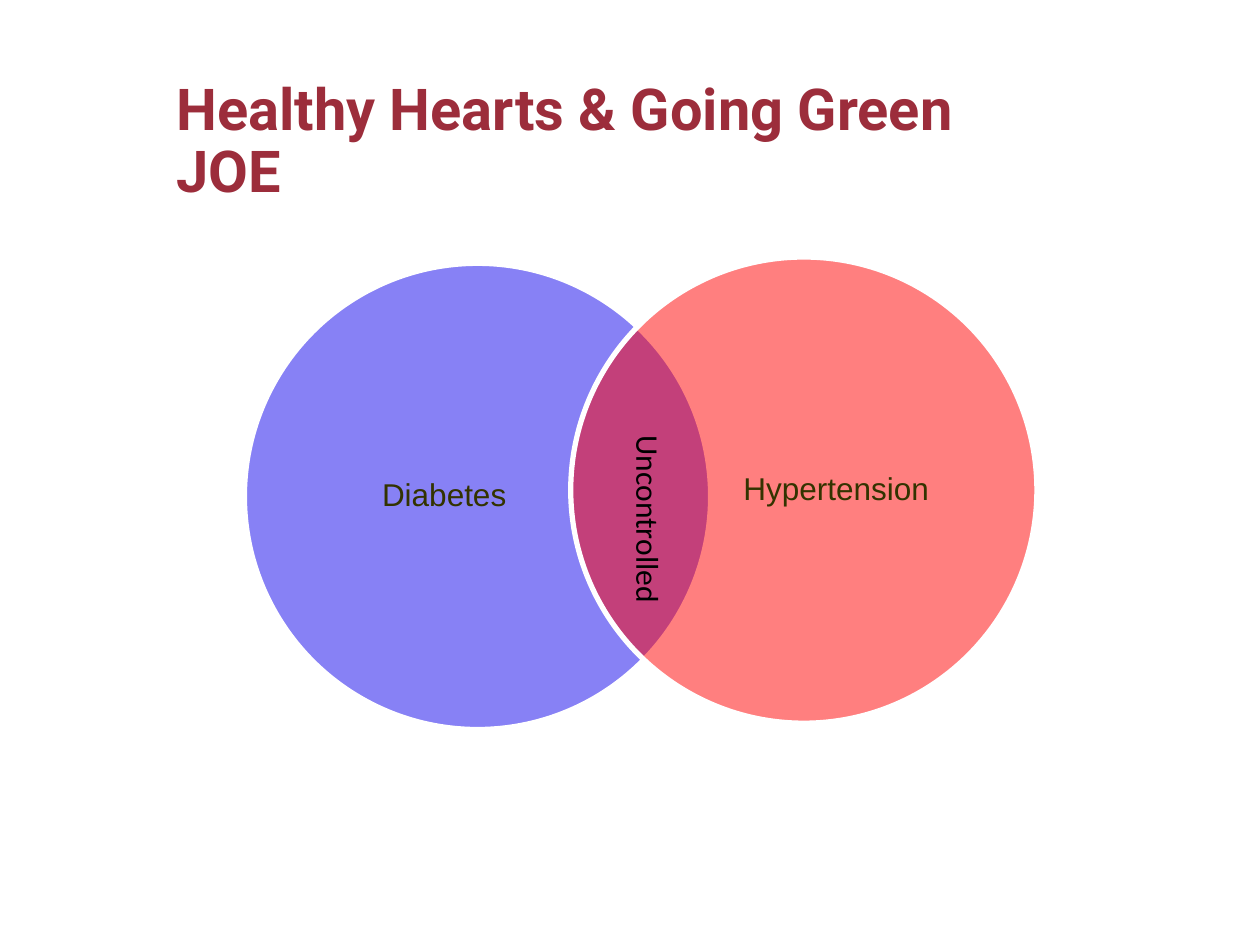
from dataclasses import dataclass

from lxml.etree import SubElement
from pptx import Presentation
from pptx.dml.color import RGBColor
from pptx.enum.shapes import MSO_SHAPE
from pptx.enum.text import MSO_ANCHOR, MSO_AUTO_SIZE, PP_ALIGN
from pptx.oxml.ns import qn
from pptx.util import Inches, Pt


@dataclass(frozen=True)
class Theme:
    title_color: RGBColor = RGBColor(0x9C, 0x2D, 0x3B)
    label_color: RGBColor = RGBColor(0x33, 0x33, 0x00)
    overlap_color: RGBColor = RGBColor(0, 0, 0)
    diabetes_fill: RGBColor = RGBColor(0x10, 0x05, 0xED)
    hypertension_fill: RGBColor = RGBColor(0xFF, 0, 0)
    outline: RGBColor = RGBColor(0xFF, 0xFF, 0xFF)
    title_font: str = "Roboto"
    label_font: str = "Arial"
    overlap_font: str = "Calibri"
    title_size: int = 33
    label_size: int = 18
    outline_width: int = 3
    fill_opacity: int = 50
    line_spacing: float = 0.9


class VennSlide:
    def __init__(self, slide, theme):
        self.slide = slide
        self.theme = theme

    def add_run(self, paragraph, text, font_name, size, color, bold=False):
        run = paragraph.add_run()
        run.text = text
        run.font.name = font_name
        run.font.size = Pt(size)
        run.font.color.rgb = color
        run.font.bold = bold

    def set_title(self, lines, left, top, width, height):
        title = self.slide.shapes.title
        title.left, title.top = Inches(left), Inches(top)
        title.width, title.height = Inches(width), Inches(height)
        frame = title.text_frame
        frame.auto_size = MSO_AUTO_SIZE.NONE
        frame.vertical_anchor = MSO_ANCHOR.MIDDLE
        paragraph = frame.paragraphs[0]
        paragraph.alignment = PP_ALIGN.LEFT
        paragraph.line_spacing = self.theme.line_spacing
        for index, line in enumerate(lines):
            if index:
                paragraph.add_line_break()
            self.add_run(paragraph, line, self.theme.title_font,
                         self.theme.title_size, self.theme.title_color, bold=True)

    def add_circle(self, left, top, diameter, color):
        circle = self.slide.shapes.add_shape(
            MSO_SHAPE.OVAL, Inches(left), Inches(top), Inches(diameter), Inches(diameter))
        circle.shadow.inherit = False
        circle.fill.solid()
        circle.fill.fore_color.rgb = color
        color_element = circle.fill._xPr.find(qn("a:solidFill"))[0]
        SubElement(color_element, qn("a:alpha"), val=str(self.theme.fill_opacity * 1000))
        circle.line.color.rgb = self.theme.outline
        circle.line.width = Pt(self.theme.outline_width)

    def add_text_box(self, left, top, width, height):
        box = self.slide.shapes.add_textbox(
            Inches(left), Inches(top), Inches(width), Inches(height))
        box.text_frame.word_wrap = True
        return box.text_frame

    def add_circle_label(self, text, left, top, width, height, alignment):
        frame = self.add_text_box(left, top, width, height)
        frame.margin_left = frame.margin_right = 0
        frame.margin_top = frame.margin_bottom = 0
        frame.vertical_anchor = MSO_ANCHOR.MIDDLE
        paragraph = frame.paragraphs[0]
        paragraph.alignment = alignment
        paragraph.line_spacing = self.theme.line_spacing
        self.add_run(paragraph, text, self.theme.label_font,
                     self.theme.label_size, self.theme.label_color)

    def add_vertical_label(self, text, left, top, width, height):
        frame = self.add_text_box(left, top, width, height)
        frame._txBody.bodyPr.set("vert", "vert")
        self.add_run(frame.paragraphs[0], text, self.theme.overlap_font,
                     self.theme.label_size, self.theme.overlap_color)


def main():
    presentation = Presentation()
    presentation.slide_width = Inches(10)
    presentation.slide_height = Inches(7.5)
    theme = Theme()
    title_only = presentation.slide_layouts[5]
    venn = VennSlide(presentation.slides.add_slide(title_only), theme)

    # Title
    venn.set_title(["Healthy Hearts & Going Green", "JOE"], 1.3, 0.41, 7.34, 1.45)

    # Circles, each followed by its label
    diameter = 3.7
    label_width, label_height = 1.51, 2
    label_drop = 0.85
    circles = [
        ("Diabetes", 1.94, 2.09, 2.77, theme.diabetes_fill, PP_ALIGN.CENTER),
        ("Hypertension", 4.53, 2.04, 5.9, theme.hypertension_fill, PP_ALIGN.LEFT),
    ]
    for text, left, top, label_left, color, alignment in circles:
        venn.add_circle(left, top, diameter, color)
        venn.add_circle_label(text, label_left, top + label_drop,
                              label_width, label_height, alignment)

    # Overlap
    venn.add_vertical_label("Uncontrolled", 4.85, 3.36, 0.5, 1.62)

    presentation.save("out.pptx")


if __name__ == "__main__":
    main()
